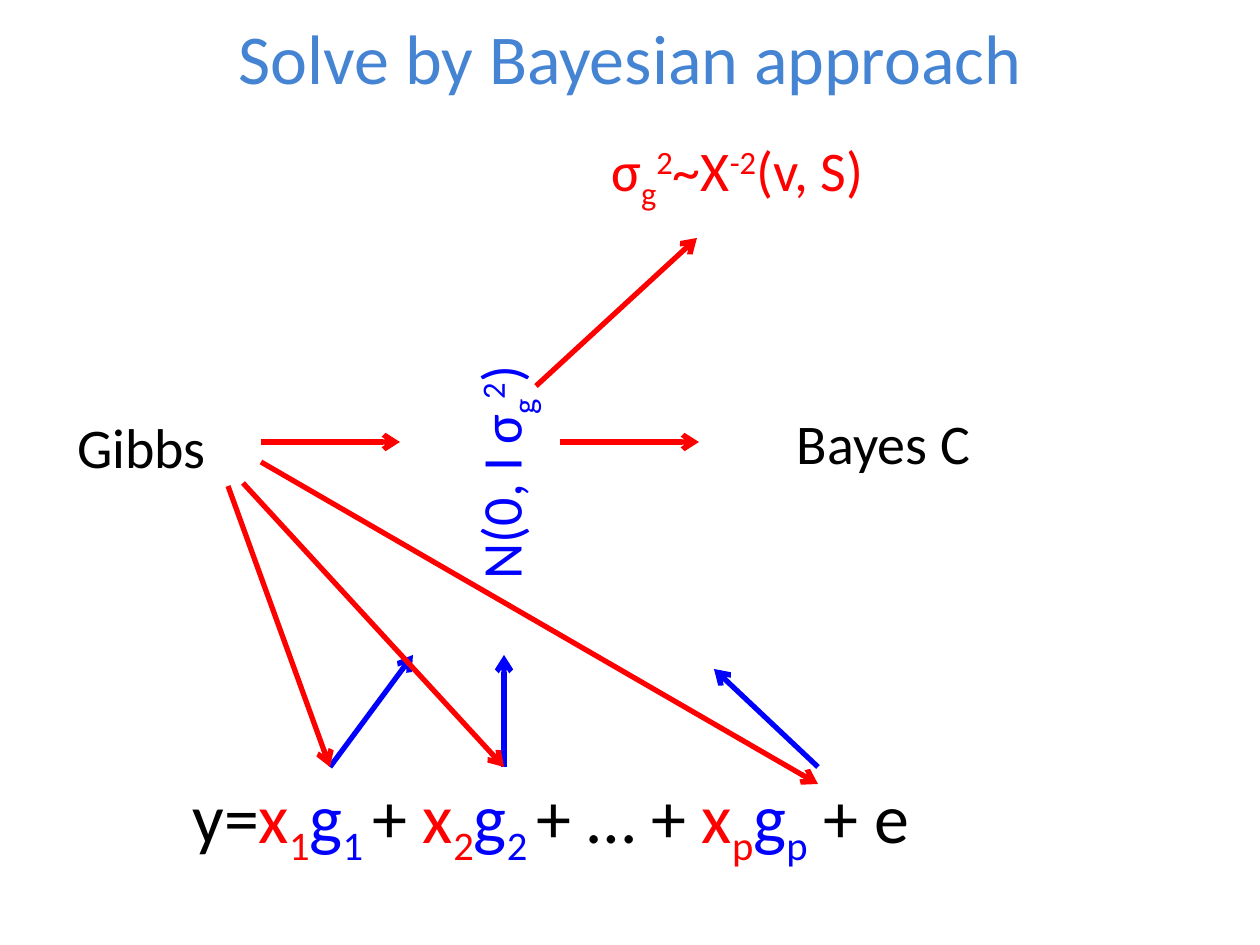
from lxml.etree import SubElement
from pptx import Presentation
from pptx.dml.color import RGBColor
from pptx.enum.shapes import MSO_CONNECTOR as Link
from pptx.enum.text import MSO_ANCHOR as Anchor, MSO_AUTO_SIZE as Fit, PP_ALIGN as Align
from pptx.oxml.ns import qn
from pptx.util import Emu, Pt

BLACK = RGBColor(0, 0, 0)
RED = RGBColor(255, 0, 0)
BLUE = RGBColor(0, 0, 255)
SKY = RGBColor(0x45, 0x84, 0xD3)
SUB, SUP = -25, 30


def px(n):
    return Emu(round(n * 914400 / 126))


class Board:
    font = "Calibri"
    weight = Pt(3)

    def __init__(self, deck):
        self.slide = deck.slides.add_slide(deck.slide_layouts[5])
        self.shapes = self.slide.shapes

    def place(self, shape, box):
        shape.left, shape.top, shape.width, shape.height = map(px, box)

    def style(self, run, size, color, base=0):
        """Format a run; base is its shift off the baseline in percent."""
        run.font.name = self.font
        run.font.size = Pt(size)
        run.font.color.rgb = color
        if base:
            run._r.get_or_add_rPr().set("baseline", str(base * 1000))

    def title(self, text, box, size, color):
        shape = self.shapes.title
        self.place(shape, box)
        frame = shape.text_frame
        frame.text = text
        frame.vertical_anchor = Anchor.MIDDLE
        para = frame.paragraphs[0]
        para.alignment = Align.CENTER
        self.style(para.runs[0], size, color)

    def text(self, parts, box, size=32, align=Align.CENTER, grow=False, turn=0):
        """Add one line made of (text, color, base) parts."""
        shape = self.shapes.add_textbox(*map(px, box))
        shape.rotation = turn
        frame = shape.text_frame
        frame.word_wrap = True
        frame.auto_size = Fit.SHAPE_TO_FIT_TEXT if grow else Fit.NONE
        frame.vertical_anchor = Anchor.TOP if grow else Anchor.MIDDLE
        para = frame.paragraphs[0]
        para.alignment = align
        for words, color, base in parts:
            run = para.add_run()
            run.text = words
            self.style(run, size, color, base)

    def arrow(self, start, end, color):
        shape = self.shapes.add_connector(Link.STRAIGHT, *map(px, start + end))
        shape.line.color.rgb = color
        shape.line.width = self.weight
        props = shape._element.spPr
        SubElement(props.find(qn("a:ln")), qn("a:tailEnd"), type="arrow")
        SubElement(props, qn("a:effectLst"))


def term(index, gap=""):
    """Give the parts of one marker effect, x times g."""
    return [("x", RED, 0), (index, RED, SUB), ("g", BLUE, 0), (index + gap, BLUE, SUB)]


def main():
    deck = Presentation()
    deck.slide_width, deck.slide_height = px(1260), px(945)
    board = Board(deck)
    board.title("Solve by Bayesian approach", (0, -4, 1260, 121), 40, SKY)

    model = [("y=", BLACK, 0), *term("1", " "), ("+ ", BLACK, 0), *term("2", " "),
             ("+ … + ", BLACK, 0), *term("p"), (" + e", BLACK, 0)]
    board.text(model, (180, 767, 932, 97), size=40, align=Align.LEFT, grow=True)

    first, second, last = (330, 767), (504, 767), (818, 767)
    for start, end in ((first, (413, 655)), (second, (504, 655)), (last, (714, 669))):
        board.arrow(start, end, BLUE)

    prior = [("N(0, I σ", BLUE, 0), ("g", BLUE, SUB), ("2", BLUE, SUP), (")", BLUE, 0)]
    board.text(prior, (354, 441, 300, 63), turn=270)
    board.text([("Bayes C", BLACK, 0)], (725, 402, 317, 81), grow=True)
    board.text([("Gibbs", BLACK, 0)], (0, 406, 283, 81), grow=True)
    scale = [("σ", RED, 0), ("g", RED, SUB), ("2", RED, SUP),
             ("~X", RED, 0), ("-2", RED, SUP), ("(v, S)", RED, 0)]
    board.text(scale, (378, 142, 719, 63))

    for start, end in (
        ((560, 442), (699, 442)),
        ((261, 442), (400, 442)),
        ((228, 486), first),
        ((243, 483), second),
        ((261, 462), (818, 784)),
        ((536, 386), (697, 238)),
    ):
        board.arrow(start, end, RED)

    deck.save("out.pptx")


if __name__ == "__main__":
    main()
